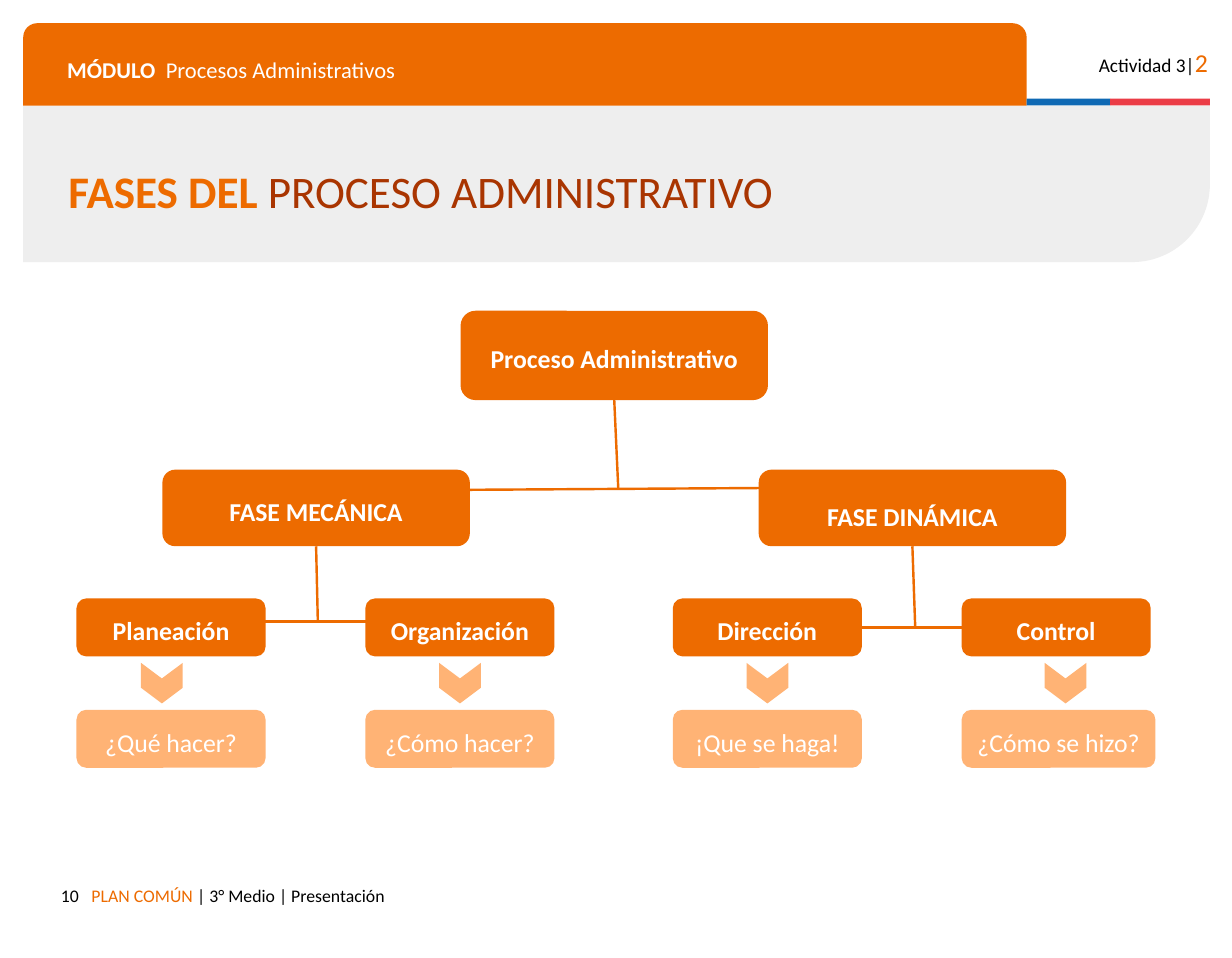
"""Build the slide on the phases of the administrative process."""
import math
from dataclasses import dataclass

from lxml import etree
from pptx import Presentation
from pptx.dml.color import RGBColor
from pptx.enum.shapes import MSO_CONNECTOR, MSO_SHAPE
from pptx.enum.text import MSO_ANCHOR, MSO_AUTO_SIZE, PP_ALIGN
from pptx.oxml.ns import qn
from pptx.shapes.autoshape import Shape
from pptx.shapes.connector import Connector
from pptx.slide import Slide
from pptx.text.text import TextFrame
from pptx.util import Inches, Pt

STRAIGHT = MSO_CONNECTOR.STRAIGHT
RECTANGLE = MSO_SHAPE.RECTANGLE
ROUNDED = MSO_SHAPE.ROUNDED_RECTANGLE
TAB = MSO_SHAPE.ROUND_2_SAME_RECTANGLE
CHEVRON = MSO_SHAPE.CHEVRON
TOP, MIDDLE = MSO_ANCHOR.TOP, MSO_ANCHOR.MIDDLE
LEFT, CENTER, RIGHT = PP_ALIGN.LEFT, PP_ALIGN.CENTER, PP_ALIGN.RIGHT
NO_AUTOSIZE = MSO_AUTO_SIZE.NONE

ORANGE = RGBColor(0xED, 0x6B, 0x00)
PEACH = RGBColor(0xFF, 0xB3, 0x75)
RUST = RGBColor(0xA9, 0x35, 0x01)
GREY = RGBColor(0xEE, 0xEE, 0xEE)
BLUE = RGBColor(0x0F, 0x69, 0xB4)
RED = RGBColor(0xEB, 0x3C, 0x46)
WHITE = RGBColor(0xFF, 0xFF, 0xFF)
BLACK = RGBColor(0x00, 0x00, 0x00)

FONT = "Calibri"
BOTTOM_SITE, LEFT_SITE, RIGHT_SITE = 2, 1, 3
QUESTION_TOP = 6.12
CHEVRON_TOP = 5.71


@dataclass(frozen=True)
class Area:
    left: float
    top: float
    width: float
    height: float

    def lengths(self) -> list[Inches]:
        return [Inches(value) for value in (self.left, self.top, self.width, self.height)]


@dataclass(frozen=True)
class Words:
    text: str
    size: float
    color: RGBColor
    bold: bool = False


@dataclass(frozen=True)
class Label:
    area: Area
    words: tuple[Words, ...]
    alignment: PP_ALIGN = LEFT


@dataclass(frozen=True)
class Box:
    text: str
    area: Area
    top_inset: float = 0.1


@dataclass(frozen=True)
class Phase:
    name: str
    question: str
    left: float
    chevron_left: float
    question_width: float = 1.63


LABELS = (
    Label(Area(9.23, 0.3, 1.28, 0.43),
          (Words("Actividad 3|", 12, BLACK), Words("2", 16, ORANGE)), RIGHT),
    Label(Area(0.48, 0.38, 8.14, 0.41),
          (Words("MÓDULO", 14, WHITE, True), Words("  Procesos Administrativos", 14, WHITE))),
    Label(Area(0.69, 7.53, 7.14, 0.35),
          (Words("PLAN COMÚN ", 11, ORANGE), Words("| 3° Medio | Presentación", 11, BLACK))),
    Label(Area(0.41, 7.53, 0.37, 0.35), (Words("10", 11, BLACK),), RIGHT),
)
TITLE_AREA = Area(0.49, 1.39, 9.15, 0.59)
TITLE_WORDS = (Words("FASES DEL ", 28, ORANGE, True), Words("PROCESO ADMINISTRATIVO", 28, RUST))

PROCESS = Box("Proceso Administrativo", Area(3.97, 2.68, 2.65, 0.77))
MECHANICAL = Box("FASE MECÁNICA", Area(1.4, 4.05, 2.65, 0.66))
DYNAMIC = Box("FASE DINÁMICA", Area(6.54, 4.05, 2.65, 0.66), 0.2)
PHASES = (
    Phase("Planeación", "¿Qué hacer?", 0.66, 1.22),
    Phase("Organización", "¿Cómo hacer?", 3.15, 3.79),
    Phase("Dirección", "¡Que se haga!", 5.8, 6.44),
    Phase("Control", "¿Cómo se hizo?", 8.29, 9.01, 1.67),
)


def fill_text(frame: TextFrame, words: tuple[Words, ...], alignment: PP_ALIGN,
              anchor: MSO_ANCHOR, insets: tuple[float, float, float, float]) -> None:
    left, top, right, bottom = (Inches(inset) for inset in insets)
    formats = {"word_wrap": True, "auto_size": NO_AUTOSIZE, "vertical_anchor": anchor,
               "margin_left": left, "margin_top": top,
               "margin_right": right, "margin_bottom": bottom}
    for name, value in formats.items():
        setattr(frame, name, value)
    paragraph = frame.paragraphs[0]
    paragraph.alignment = alignment
    for part in words:
        run = paragraph.add_run()
        run.text = part.text
        for name, value in {"name": FONT, "size": Pt(part.size), "bold": part.bold}.items():
            setattr(run.font, name, value)
        run.font.color.rgb = part.color


def paint(shape: Shape, color: RGBColor) -> None:
    shape.shadow.inherit = False
    shape.fill.solid()
    shape.fill.fore_color.rgb = color
    shape.line.fill.background()


def add_block(slide: Slide, kind: MSO_SHAPE, area: Area, color: RGBColor,
              adjustments: tuple[float, ...] = ()) -> Shape:
    shape = slide.shapes.add_shape(kind, *area.lengths())
    paint(shape, color)
    for index, value in enumerate(adjustments):
        shape.adjustments[index] = value
    return shape


def add_title_band(slide: Slide) -> None:
    left, top, right, bottom, radius = 0.2, 0.91, 10.43, 2.26, 0.67
    angles = [math.radians(degrees) for degrees in range(0, 91, 3)]
    corner = [(Inches(right - radius + radius * math.cos(angle)),
               Inches(bottom - radius + radius * math.sin(angle))) for angle in angles]
    builder = slide.shapes.build_freeform(Inches(left), Inches(top))
    builder.add_line_segments([(Inches(right), Inches(top)), *corner,
                               (Inches(left), Inches(bottom))], close=True)
    paint(builder.convert_to_shape(), GREY)


def add_box(slide: Slide, box: Box, color: RGBColor, bold: bool) -> Shape:
    shape = add_block(slide, ROUNDED, box.area, color, (0.167,))
    fill_text(shape.text_frame, (Words(box.text, 16, WHITE, bold),), CENTER, MIDDLE,
              (0.1, box.top_inset, 0.1, 0.05))
    return shape


def add_line(slide: Slide, start: tuple[float, float], end: tuple[float, float]) -> Connector:
    points = [Inches(value) for value in (*start, *end)]
    connector = slide.shapes.add_connector(STRAIGHT, *points)
    connector.line.color.rgb = ORANGE
    connector.line.width = Pt(1.5)
    etree.SubElement(connector.element.spPr, qn("a:effectLst"))
    return connector


def add_header(slide: Slide) -> None:
    add_title_band(slide)
    add_block(slide, TAB, Area(0.2, 0.2, 8.65, 0.71), ORANGE, (0.17, 0))
    add_block(slide, RECTANGLE, Area(8.85, 0.85, 0.72, 0.06), BLUE)
    add_block(slide, RECTANGLE, Area(9.57, 0.85, 0.86, 0.06), RED)
    for label in LABELS:
        text_box = slide.shapes.add_textbox(*label.area.lengths())
        fill_text(text_box.text_frame, label.words, label.alignment, TOP, (0.1,) * 4)
    title = slide.shapes.title
    title.left, title.top, title.width, title.height = TITLE_AREA.lengths()
    fill_text(title.text_frame, TITLE_WORDS, LEFT, MIDDLE, (0.1,) * 4)
    title.text_frame.paragraphs[0].line_spacing = 0.8
    title.element.getparent().append(title.element)


def add_diagram(slide: Slide) -> None:
    add_line(slide, (2.94, 4.23), (7.8, 4.2))
    add_line(slide, (1.48, 5.36), (3.97, 5.36))
    for parent, end in ((PROCESS, (5.33, 4.22)), (MECHANICAL, (2.74, 5.36)),
                        (DYNAMIC, (7.89, 5.42))):
        shape = add_box(slide, parent, ORANGE, True)
        add_line(slide, end, end).begin_connect(shape, BOTTOM_SITE)
    names = []
    for phase in PHASES:
        names.append(add_box(slide, Box(phase.name, Area(phase.left, 5.16, 1.63, 0.5)),
                             ORANGE, True))
        question_area = Area(phase.left, QUESTION_TOP, phase.question_width, 0.5)
        add_box(slide, Box(phase.question, question_area), PEACH, False)
        chevron = add_block(slide, CHEVRON, Area(phase.chevron_left, CHEVRON_TOP, 0.35, 0.36),
                            PEACH, (0.385,))
        chevron.rotation = 90
    direction, control = names[2:]
    link = add_line(slide, (7.43, 5.41), (8.29, 5.41))
    link.begin_connect(direction, RIGHT_SITE)
    link.end_connect(control, LEFT_SITE)


def main() -> None:
    presentation = Presentation()
    presentation.slide_width, presentation.slide_height = Inches(10.62), Inches(8.26)
    slide = presentation.slides.add_slide(presentation.slide_layouts[5])
    add_header(slide)
    add_diagram(slide)
    presentation.save("out.pptx")


if __name__ == "__main__":
    main()
